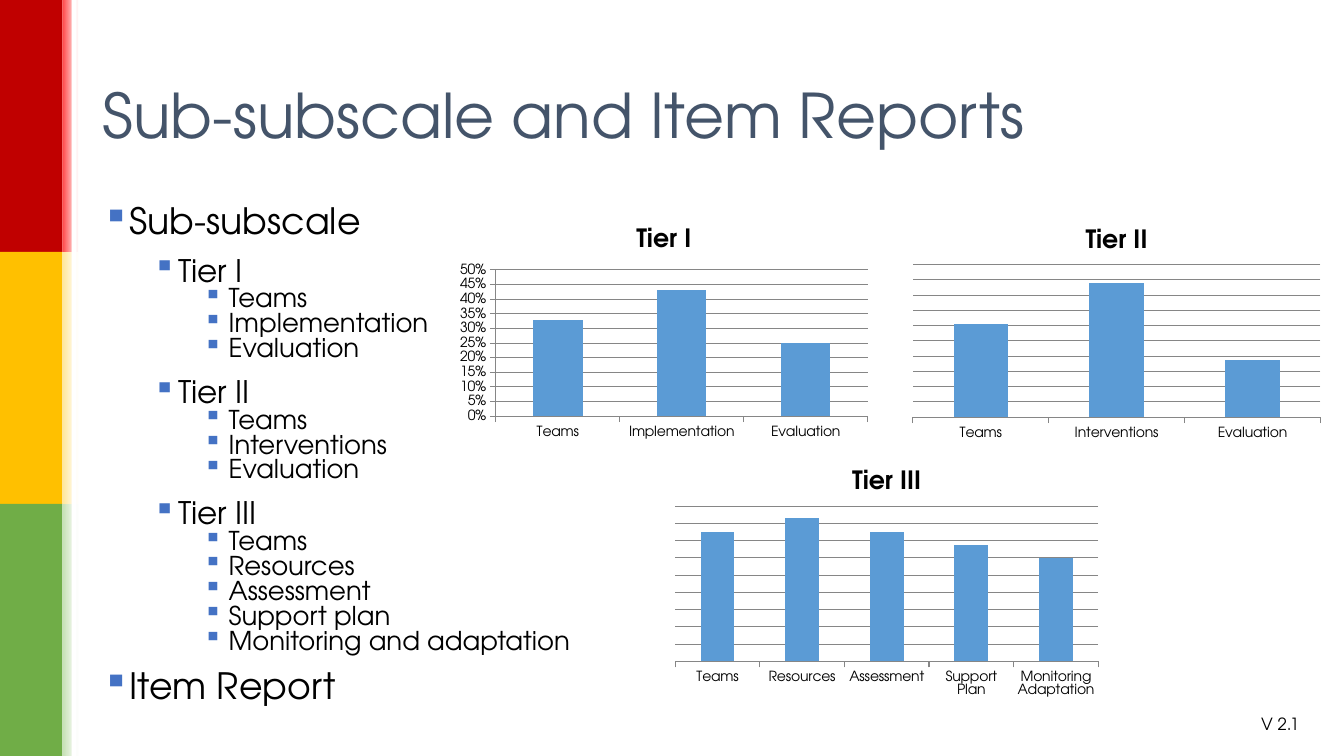
from dataclasses import dataclass

from lxml.etree import SubElement
from pptx import Presentation
from pptx.chart.data import CategoryChartData
from pptx.dml.color import RGBColor
from pptx.enum.chart import XL_CHART_TYPE, XL_TICK_MARK
from pptx.enum.shapes import MSO_SHAPE
from pptx.enum.text import MSO_ANCHOR
from pptx.oxml.ns import qn
from pptx.util import Inches, Pt

TITLE = "Sub-subscale and Item Reports"
VERSION = "V 2.1"

# (level, text)
OUTLINE = [
    (0, "Sub-subscale"),
    (1, "Tier I"),
    (2, "Teams"),
    (2, "Implementation"),
    (2, "Evaluation"),
    (1, "Tier II"),
    (2, "Teams"),
    (2, "Interventions"),
    (2, "Evaluation"),
    (1, "Tier III"),
    (2, "Teams"),
    (2, "Resources"),
    (2, "Assessment"),
    (2, "Support plan"),
    (2, "Monitoring and adaptation"),
    (0, "Item Report"),
]

CHARTS = [
    dict(title="Tier I", place=(4.48, 2.09, 4.21, 2.31), top=0.5, step=0.05, scale_shown=True,
         bars={"Teams": 0.33, "Implementation": 0.43, "Evaluation": 0.25}),
    dict(title="Tier II", place=(8.97, 2.1, 4.21, 2.31), top=114, step=11.4, scale_shown=False,
         bars={"Teams": 70, "Interventions": 100, "Evaluation": 43}),
    dict(title="Tier III", place=(6.61, 4.49, 4.37, 2.47), top=108, step=12, scale_shown=False,
         bars={"Teams": 90, "Resources": 100, "Assessment": 90,
               "Support Plan": 81, "Monitoring Adaptation": 72}),
]

# (band, start of its fading edge), top to bottom
BANDS = [("C00000", "FF4747"), ("FFC000", "FFE699"), ("70AD47", "C5E0B4")]

WIDTH, HEIGHT = 13.33, 7.5
BAND_WIDTH, EDGE_WIDTH = 0.62, 0.16
MARGIN, CONTENT_WIDTH = 0.92, 11.5


@dataclass(frozen=True)
class Theme:
    font: str = "TeX Gyre Adventor"
    ink: str = "000000"
    heading: str = "44546A"
    bullet: str = "4472C4"
    bar: str = "5B9BD5"
    rule: str = "868686"
    paper: str = "FFFFFF"
    halo: str = "DEEBF7"
    title_size: float = 44
    level_sizes: tuple = (25.9, 22.2, 18.5)
    chart_title_size: float = 18
    chart_size: float = 10
    version_size: float = 12


THEME = Theme()


def color(code):
    return RGBColor.from_string(code)


def style_font(font, size, code):
    font.name = THEME.font
    font.size = Pt(size)
    font.color.rgb = color(code)


def add_span(para, text, size, code):
    span = para.add_run()
    span.text = text
    style_font(span.font, size, code)
    return span


def add_frame(page, *place):
    frame = page.shapes.add_textbox(*map(Inches, place)).text_frame
    frame.word_wrap = True
    return frame


def add_block(page, place, fill, fade_to=None):
    """Add a borderless rectangle, fading to the right when fade_to is given."""
    block = page.shapes.add_shape(MSO_SHAPE.RECTANGLE, *map(Inches, place))
    block.shadow.inherit = False
    block.line.fill.background()
    if fade_to is None:
        block.fill.solid()
        block.fill.fore_color.rgb = color(fill)
        return
    block.fill.gradient()
    block.fill.gradient_angle = 0
    for stop, code in zip(block.fill.gradient_stops, (fill, fade_to)):
        stop.color.rgb = color(code)


def add_side_bands(page):
    band_height = HEIGHT / len(BANDS)
    for row, (band, edge) in enumerate(BANDS):
        top = row * band_height
        add_block(page, (0, top, BAND_WIDTH, band_height), band)
        add_block(page, (BAND_WIDTH, top, EDGE_WIDTH, band_height), edge, THEME.paper)
    add_block(page, (0.71, 0, 0.05, HEIGHT), THEME.paper)


def add_version(page):
    frame = add_frame(page, 12.41, 7.03, 0.92, 0.3)
    span = add_span(frame.paragraphs[0], VERSION, THEME.version_size, THEME.ink)
    properties = span.font.fill._xPr
    halo = SubElement(properties, qn("a:ln"), w=str(Pt(0.75)))
    SubElement(SubElement(halo, qn("a:solidFill")), qn("a:srgbClr"), val=THEME.halo)
    properties.insert(0, halo)


def add_bullet(para, level):
    properties = para._p.get_or_add_pPr()
    properties.set("marL", str(Inches(0.25 + 0.5 * level)))
    properties.set("indent", str(Inches(-0.25)))
    SubElement(SubElement(properties, qn("a:buClr")), qn("a:srgbClr"), val=THEME.bullet)
    SubElement(properties, qn("a:buChar"), char="▪")


def add_outline(page):
    frame = add_frame(page, MARGIN, 2, CONTENT_WIDTH, 5.3)
    previous = None
    for level, text in OUTLINE:
        first = previous is None
        para = frame.paragraphs[0] if first else frame.add_paragraph()
        add_bullet(para, level)
        para.level = level
        para.line_spacing = 0.8
        para.space_before = Pt(12 if not first and level < previous else 0)
        para.space_after = Pt(12 if first else 0)
        add_span(para, text, THEME.level_sizes[level], THEME.ink)
        previous = level


def add_column_chart(page, title, place, top, step, scale_shown, bars):
    data = CategoryChartData()
    data.categories = list(bars)
    data.add_series(title, list(bars.values()))
    chart = page.shapes.add_chart(
        XL_CHART_TYPE.COLUMN_CLUSTERED, *map(Inches, place), data).chart
    style_font(chart.font, THEME.chart_size, THEME.ink)
    chart.has_legend = False
    chart.has_title = True
    heading = add_span(chart.chart_title.text_frame.paragraphs[0], title,
                       THEME.chart_title_size, THEME.ink)
    heading.font.bold = True

    plot = chart.plots[0]
    plot.gap_width = 150
    plot.vary_by_categories = False
    fill = plot.series[0].format.fill
    fill.solid()
    fill.fore_color.rgb = color(THEME.bar)

    scale = chart.value_axis
    scale.minimum_scale, scale.maximum_scale, scale.major_unit = 0, top, step
    scale.visible = scale_shown
    scale.has_major_gridlines = True
    scale.tick_labels.number_format = "0%"
    scale.tick_labels.number_format_is_linked = False
    for axis in (scale, chart.category_axis):
        axis.major_tick_mark = XL_TICK_MARK.OUTSIDE
    for line in (scale.format.line, chart.category_axis.format.line,
                 scale.major_gridlines.format.line):
        line.color.rgb = color(THEME.rule)
        line.width = Pt(0.75)


def main():
    deck = Presentation()
    deck.slide_width, deck.slide_height = Inches(WIDTH), Inches(HEIGHT)
    page = deck.slides.add_slide(deck.slide_layouts[6])
    add_side_bands(page)
    add_version(page)
    add_outline(page)
    title = add_frame(page, MARGIN, 0.4, CONTENT_WIDTH, 1.45)
    title.vertical_anchor = MSO_ANCHOR.MIDDLE
    add_span(title.paragraphs[0], TITLE, THEME.title_size, THEME.heading)
    for chart in CHARTS:
        add_column_chart(page, **chart)
    deck.save("out.pptx")


if __name__ == "__main__":
    main()
